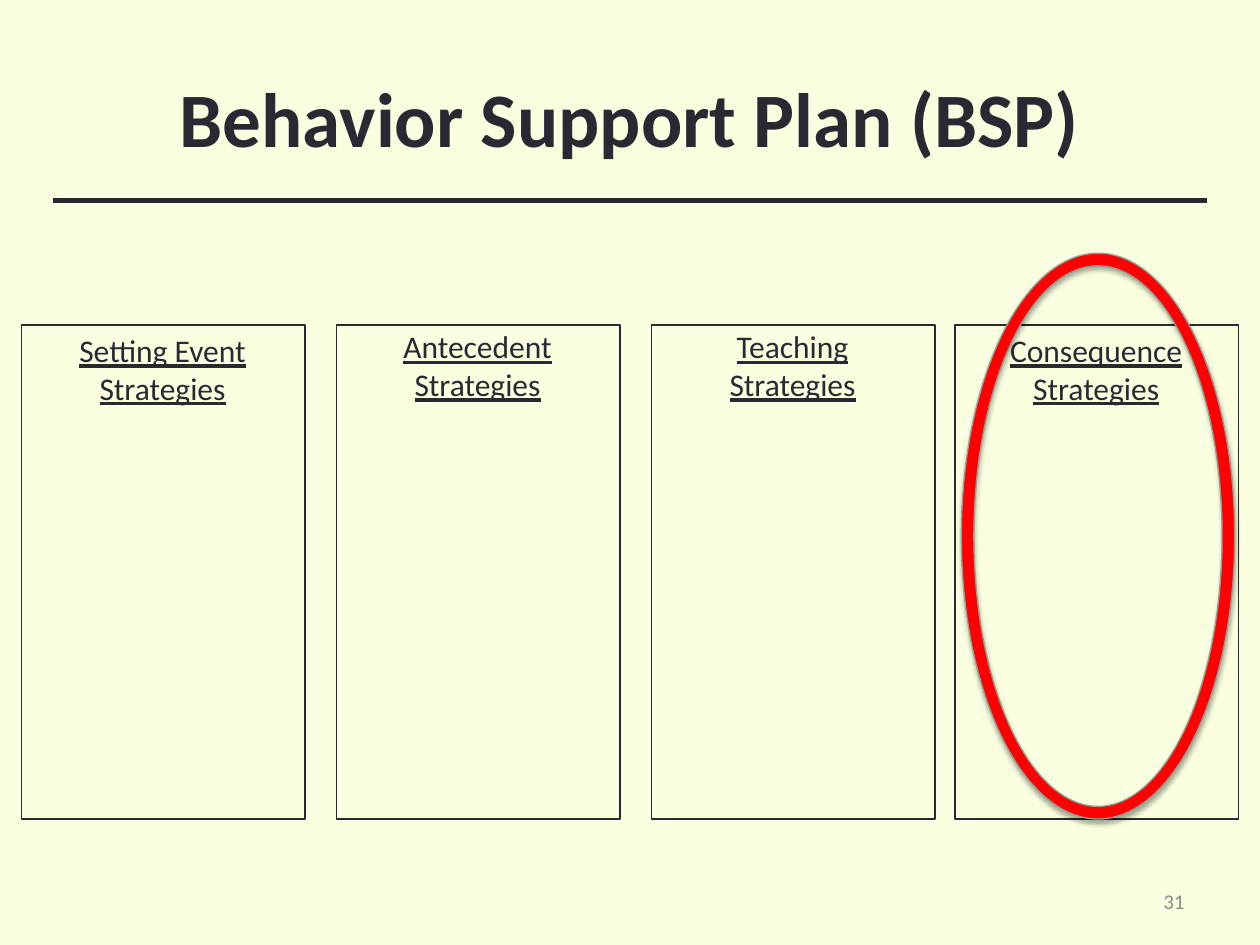
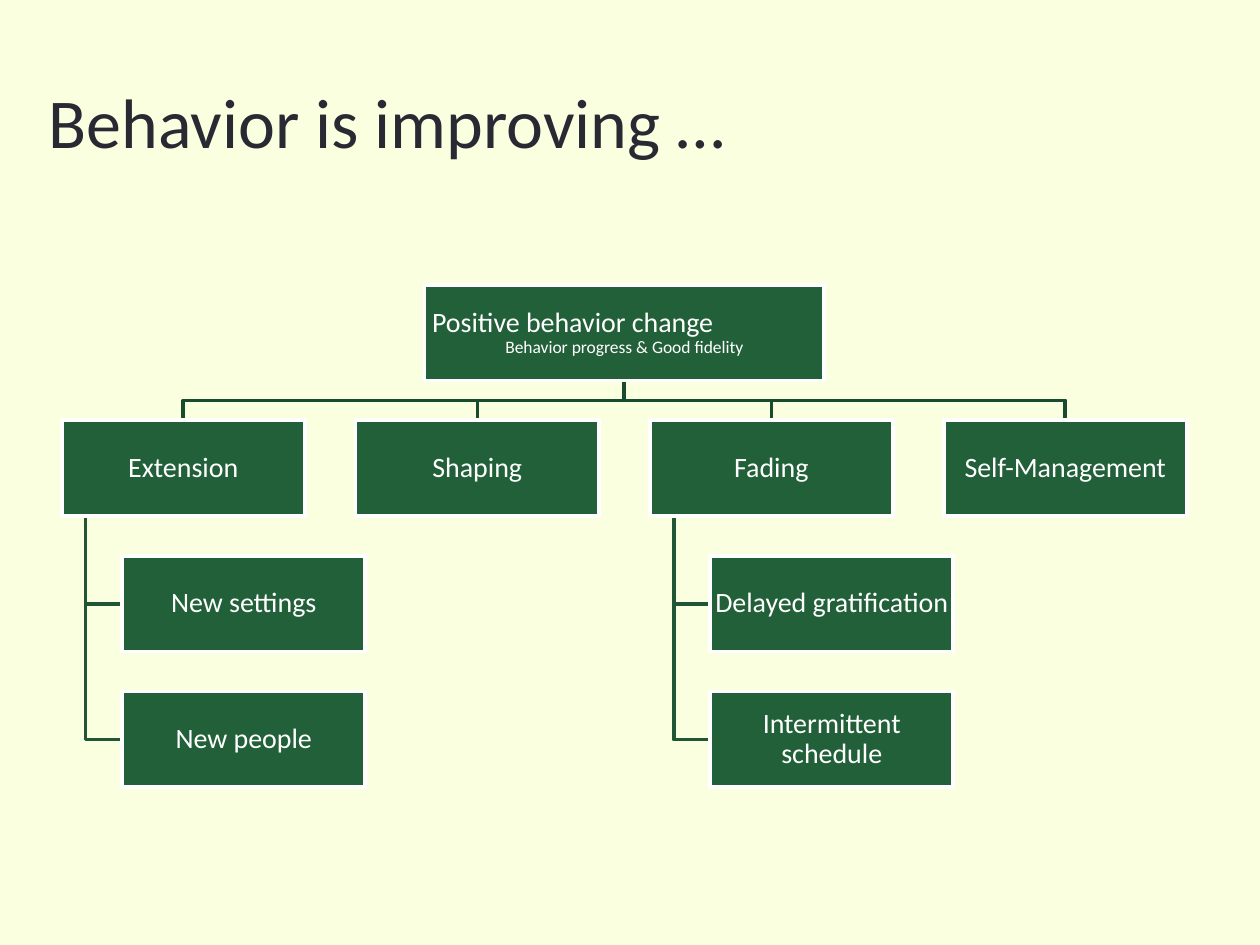
from lxml import etree
from pptx import Presentation
from pptx.dml.color import RGBColor
from pptx.enum.shapes import MSO_CONNECTOR, MSO_SHAPE
from pptx.enum.text import MSO_ANCHOR, PP_ALIGN
from pptx.oxml.ns import qn
from pptx.util import Inches, Pt

LEFT, CENTER, RIGHT = PP_ALIGN.LEFT, PP_ALIGN.CENTER, PP_ALIGN.RIGHT
TOP, MIDDLE = MSO_ANCHOR.TOP, MSO_ANCHOR.MIDDLE
RECTANGLE, DONUT = MSO_SHAPE.RECTANGLE, MSO_SHAPE.DONUT
STRAIGHT = MSO_CONNECTOR.STRAIGHT

FONT = "Calibri"
COLORS = {
    "background": "FAFFE0",
    "ink": "292934",
    "muted": "8D8D8F",
    "ring": "FF0000",
    "ring_edge": "8F9F95",
    "node": "22603A",
    "branch": "194C2E",
    "twig": "205635",
    "white": "FFFFFF",
    "shadow": "000000",
}

STRATEGY_LEFTS = [0.17, 2.67, 5.17, 7.58]
STRATEGY_TOP, STRATEGY_WIDTH, STRATEGY_HEIGHT = 2.58, 2.25, 3.92
STRATEGIES = [
    ("Setting Event Strategies", 0),
    ("Antecedent Strategies", -0.03),
    ("Teaching Strategies", -0.03),
    ("Consequence Strategies", 0),
]

NODE_WIDTH, NODE_HEIGHT, ROOT_WIDTH = 1.93, 0.76, 3.17
TREE_LEFT, TREE_TOP = 0.49, 2.26
COLUMN_PITCH, ROW_PITCH = 7 / 3, 1.076
CHILD_INDENT, STEM_INDENT = 0.48, 0.19
TREE_LINE = 2.08
TREE = [
    ("Extension", ["New settings", "New people"]),
    ("Shaping", []),
    ("Fading", ["Delayed gratification", "Intermittent schedule"]),
    ("Self-Management", []),
]


def rgb(name):
    return RGBColor.from_string(COLORS[name])


def inches(*values):
    return [Inches(value) for value in values]


def add_slide(presentation):
    slide = presentation.slides.add_slide(presentation.slide_layouts[6])
    slide.background.fill.solid()
    slide.background.fill.fore_color.rgb = rgb("background")
    return slide


def set_text(shape, lines, color, align=CENTER, anchor=TOP, bold=False, underline=False):
    frame = shape.text_frame
    frame.word_wrap = True
    frame.vertical_anchor = anchor
    frame.text = "\n".join(text for text, size in lines)
    for paragraph, (text, size) in zip(frame.paragraphs, lines):
        paragraph.alignment = align
        font = paragraph.runs[0].font
        font.name, font.size = FONT, Pt(size)
        font.bold, font.underline = bold, underline
        font.color.rgb = rgb(color)
    return frame


def add_text(slide, box, text, size, color="ink", **style):
    shape = slide.shapes.add_textbox(*inches(*box))
    set_text(shape, [(text, size)], color, **style)


def add_shape(slide, kind, box, line, width, fill=None):
    shape = slide.shapes.add_shape(kind, *inches(*box))
    shape.shadow.inherit = False
    if fill:
        shape.fill.solid()
        shape.fill.fore_color.rgb = rgb(fill)
    else:
        shape.fill.background()
    shape.line.color.rgb = rgb(line)
    shape.line.width = Pt(width)
    return shape


def add_rule(slide, left, right, y):
    rule = slide.shapes.add_connector(STRAIGHT, *inches(left, y, right, y))
    rule.line.color.rgb = rgb("ink")
    rule.line.width = Pt(3)
    etree.SubElement(rule._element.spPr, qn("a:effectLst"))


def add_ring(slide, box, thickness):
    ring = add_shape(slide, DONUT, box, "ring_edge", 0.75, "ring")
    ring.adjustments[0] = thickness / box[2]
    effects = ring._element.spPr.find(qn("a:effectLst"))
    shadow = etree.SubElement(
        effects, qn("a:outerShdw"), blurRad=str(Pt(3.1)), dist=str(Pt(1.8)),
        dir="5400000", rotWithShape="0")
    color = etree.SubElement(shadow, qn("a:srgbClr"), val=COLORS["shadow"])
    etree.SubElement(color, qn("a:alpha"), val="35000")


def add_path(slide, points, color):
    start, *rest = [inches(*point) for point in points]
    builder = slide.shapes.build_freeform(*start)
    builder.add_line_segments(rest, close=False)
    shape = builder.convert_to_shape()
    shape.shadow.inherit = False
    shape.fill.background()
    shape.line.color.rgb = rgb(color)
    shape.line.width = Pt(TREE_LINE)


def add_node(slide, left, row, lines, width=NODE_WIDTH):
    box = (left, row_top(row), width, NODE_HEIGHT)
    node = add_shape(slide, RECTANGLE, box, "white", TREE_LINE, "node")
    frame = set_text(node, lines, "white", anchor=MIDDLE)
    frame.margin_left = frame.margin_right = Inches(0.01)
    frame.margin_top = frame.margin_bottom = Inches(0.01)
    for paragraph in frame.paragraphs:
        paragraph.line_spacing = 0.9
    return frame


def row_top(row):
    return TREE_TOP + row * ROW_PITCH


def column_left(column):
    return TREE_LEFT + column * COLUMN_PITCH


def add_branches(slide, root_center):
    start, end = row_top(0) + NODE_HEIGHT, row_top(1)
    bend = (start + end) / 2
    for column, (heading, children) in enumerate(TREE):
        center = column_left(column) + NODE_WIDTH / 2
        add_path(slide, [(root_center, start), (root_center, bend),
                         (center, bend), (center, end)], "branch")
        stem = column_left(column) + STEM_INDENT
        for row in range(2, 2 + len(children)):
            middle = row_top(row) + NODE_HEIGHT / 2
            add_path(slide, [(stem, row_top(1) + NODE_HEIGHT), (stem, middle),
                             (column_left(column) + CHILD_INDENT, middle)], "twig")


def build_plan_slide(presentation):
    slide = add_slide(presentation)
    add_text(slide, (0.5, 0.3, 9, 1.25), "Behavior Support Plan (BSP)", 44,
             anchor=MIDDLE, bold=True)
    for left in STRATEGY_LEFTS:
        add_shape(slide, RECTANGLE,
                  (left, STRATEGY_TOP, STRATEGY_WIDTH, STRATEGY_HEIGHT), "ink", 0.75)
    for left, (label, shift) in zip(STRATEGY_LEFTS, STRATEGIES):
        add_text(slide, (left + 0.08, STRATEGY_TOP + shift, 2.08, 0.7), label, 18,
                 underline=True)
    add_rule(slide, 0.42, 9.58, 1.59)
    add_ring(slide, (7.63, 2.01, 2.17, 4.49), 0.1)
    add_text(slide, (7.17, 6.95, 2.33, 0.4), "31", 12, "muted",
             align=RIGHT, anchor=MIDDLE)


def build_progress_slide(presentation):
    slide = add_slide(presentation)
    add_text(slide, (0.29, 0.55, 8.17, 0.81), "Behavior is improving …", 40,
             align=LEFT, anchor=MIDDLE)
    root_center = (column_left(0) + column_left(len(TREE) - 1) + NODE_WIDTH) / 2
    add_branches(slide, root_center)
    root = add_node(slide, root_center - ROOT_WIDTH / 2, 0,
                    [("Positive behavior change", 16),
                     ("Behavior progress & Good fidelity", 10)], ROOT_WIDTH)
    lead = root.paragraphs[0]
    lead.alignment = LEFT
    lead._p.get_or_add_pPr().set("marL", str(Inches(0.05)))
    for column, (heading, children) in enumerate(TREE):
        left = column_left(column)
        add_node(slide, left, 1, [(heading, 16)])
        for row, child in enumerate(children, start=2):
            add_node(slide, left + CHILD_INDENT, row, [(child, 16)])


def main():
    presentation = Presentation()
    presentation.slide_width, presentation.slide_height = inches(10, 7.5)
    build_plan_slide(presentation)
    build_progress_slide(presentation)
    presentation.save("out.pptx")


if __name__ == "__main__":
    main()
